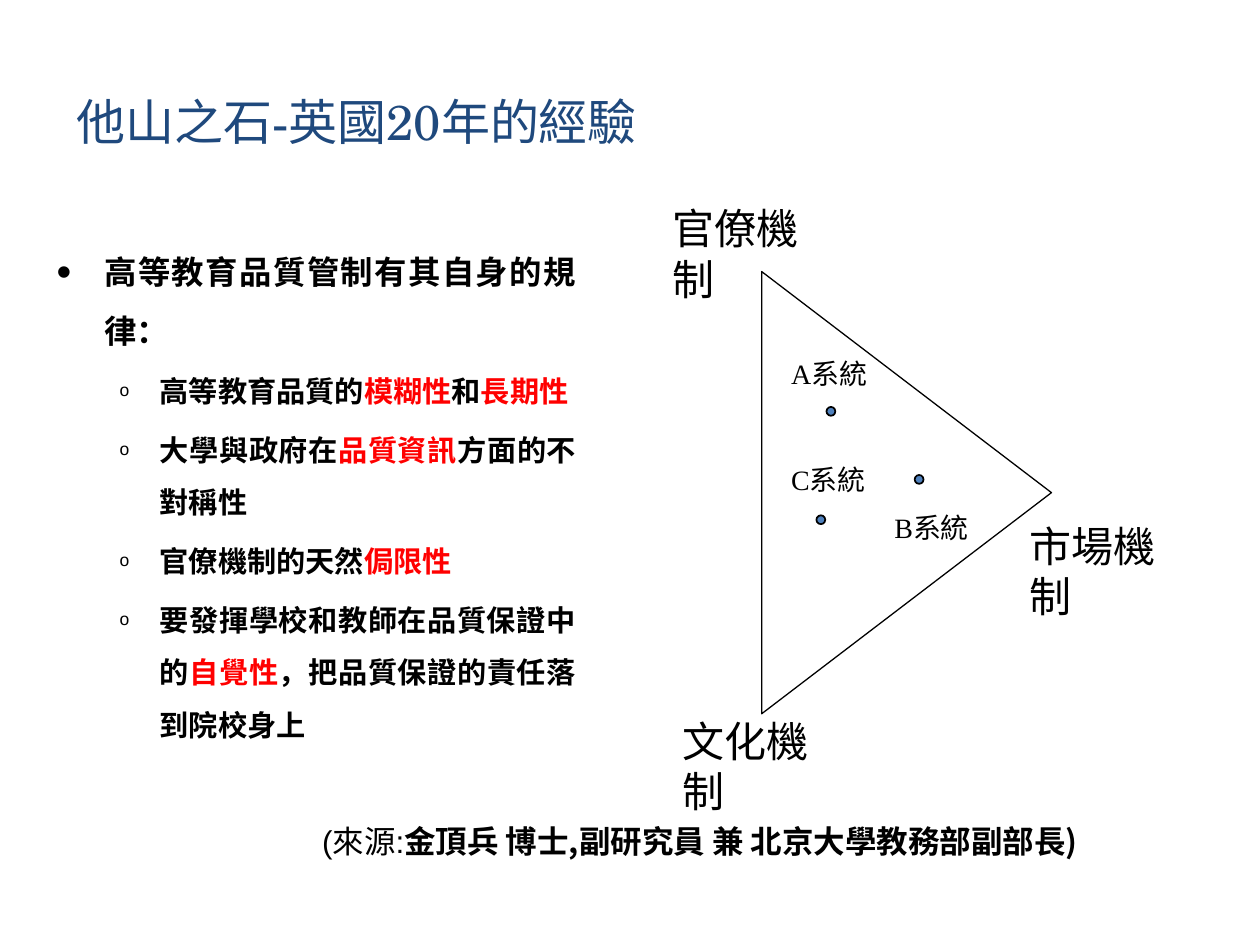
from dataclasses import dataclass
from typing import NamedTuple

from lxml.etree import SubElement
from pptx import Presentation
from pptx.dml.color import RGBColor
from pptx.enum.shapes import MSO_SHAPE as Shape
from pptx.enum.text import MSO_ANCHOR as Anchor, PP_ALIGN as Align
from pptx.oxml.ns import qn
from pptx.util import Emu, Pt

PX = 9144  # 100 px to the inch


@dataclass(frozen=True)
class Theme:
    ink: str = "000000"
    title: str = "1F497D"
    accent: str = "FF0000"
    dot: str = "4F81BD"
    paper: str = "FFFFFF"
    cjk: str = "Noto Sans CJK SC"
    sans: str = "Arial"
    serif: str = "Times New Roman"
    display: str = "TeX Gyre Schola"
    title_size: float = 28
    corner_size: float = 24
    system_size: float = 16
    source_size: float = 18
    rule_size: float = 18.5
    point_size: float = 16.7


THEME = Theme()


class Area(NamedTuple):
    left: int
    top: int
    width: int
    height: int


class Span(NamedTuple):
    text: str
    color: str = THEME.ink
    font: str = THEME.cjk
    bold: bool = True


class Bullet(NamedTuple):
    mark: str
    percent: int
    margin: int
    hang: int


class Label(NamedTuple):
    text: str
    area: Area
    size: float


RULE_BULLET = Bullet("•", 130, 38, 38)
POINT_BULLET = Bullet("o", 60, 82, 32)

TITLE = "他山之石-英國20年的經驗"
RULE = [Span("高等教育品質管制有其自身的規律：")]
POINTS = [
    [Span("高等教育品質的"), Span("模糊性", THEME.accent), Span("和"), Span("長期性", THEME.accent)],
    [Span("大學與政府在"), Span("品質資訊", THEME.accent), Span("方面的不對稱性")],
    [Span("官僚機制的天然"), Span("侷限性", THEME.accent)],
    [Span("要發揮學校和教師在品質保證中的"), Span("自覺性", THEME.accent),
     Span("，把品質保證的責任落到院校身上")],
]
SOURCE = [
    Span("(來源:", font=THEME.sans, bold=False),
    Span("金頂兵 博士,副研究員 兼 北京大學教務部副部長)"),
]
LABELS = [
    Label("官僚機制", Area(524, 156, 127, 43), THEME.corner_size),
    Label("市場機制", Area(807, 408, 127, 43), THEME.corner_size),
    Label("文化機制", Area(532, 563, 127, 43), THEME.corner_size),
    Label("A系統", Area(618, 278, 83, 32), THEME.system_size),
    Label("B系統", Area(700, 400, 83, 32), THEME.system_size),
    Label("C系統", Area(618, 362, 108, 37), THEME.system_size),
]
DOTS = [(656, 323), (648, 409), (726, 377)]
DOT_SIZE = 7


def emu(area: Area) -> list[Emu]:
    return [Emu(length * PX) for length in area]


def apply(target, values: dict) -> None:
    for name, value in values.items():
        setattr(target, name, value)


def add_spans(para, spans: list[Span], size: float) -> None:
    for span in spans:
        run = para.add_run()
        run.text = span.text
        apply(run.font, {"name": span.font, "size": Pt(size), "bold": span.bold})
        run.font.color.rgb = RGBColor.from_string(span.color)
        SubElement(run._r.get_or_add_rPr(), qn("a:ea"), typeface=THEME.cjk)


def add_bullet(para, bullet: Bullet) -> None:
    props = para._p.get_or_add_pPr()
    props.set("marL", str(bullet.margin * PX))
    props.set("indent", str(-bullet.hang * PX))
    SubElement(props, qn("a:buSzPct"), val=str(bullet.percent * 1000))
    SubElement(props, qn("a:buFont"), typeface=THEME.sans)
    SubElement(props, qn("a:buChar"), char=bullet.mark)


def add_frame(slide, area: Area):
    frame = slide.shapes.add_textbox(*emu(area)).text_frame
    frame.word_wrap = True
    return frame


def add_title(slide) -> None:
    box = slide.shapes.title
    apply(box, dict(zip(("left", "top", "width", "height"), emu(Area(51, 68, 900, 101)))))
    box.text_frame.vertical_anchor = Anchor.TOP
    para = box.text_frame.paragraphs[0]
    para.alignment = Align.LEFT
    add_spans(para, [Span(TITLE, THEME.title, THEME.display, False)], THEME.title_size)


def add_rules(slide) -> None:
    frame = add_frame(slide, Area(35, 180, 432, 433))
    rows = [(RULE, RULE_BULLET, THEME.rule_size)]
    rows += [(point, POINT_BULLET, THEME.point_size) for point in POINTS]
    for index, (spans, bullet, size) in enumerate(rows):
        para = frame.add_paragraph() if index else frame.paragraphs[0]
        apply(para, {"alignment": Align.JUSTIFY, "line_spacing": 1.5,
                     "space_before": Pt(3.5 if index else 0)})
        add_bullet(para, bullet)
        add_spans(para, spans, size)


def add_label(slide, label: Label) -> None:
    para = add_frame(slide, label.area).paragraphs[0]
    add_spans(para, [Span(label.text, font=THEME.serif, bold=False)], label.size)


def add_figure(slide, kind: Shape, area: Area, fill: str, line_width: float):
    figure = slide.shapes.add_shape(kind, *emu(area))
    figure.shadow.inherit = False
    figure.fill.solid()
    figure.fill.fore_color.rgb = RGBColor.from_string(fill)
    figure.line.color.rgb = RGBColor.from_string(THEME.ink)
    figure.line.width = Pt(line_width)
    return figure


def add_source(slide) -> None:
    para = add_frame(slide, Area(225, 651, 661, 68)).paragraphs[0]
    apply(para, {"alignment": Align.CENTER, "line_spacing": 0.9})
    add_spans(para, SOURCE, THEME.source_size)


def main() -> None:
    deck = Presentation()
    apply(deck, {"slide_width": Emu(1000 * PX), "slide_height": Emu(750 * PX)})
    slide = deck.slides.add_slide(deck.slide_layouts.get_by_name("Title Only"))
    add_title(slide)
    add_rules(slide)
    triangle = add_figure(slide, Shape.ISOSCELES_TRIANGLE, Area(544, 276, 351, 230),
                          THEME.paper, 0.75)
    triangle.rotation = 90
    for left, top in DOTS:
        add_figure(slide, Shape.OVAL, Area(left, top, DOT_SIZE, DOT_SIZE), THEME.dot, 1)
    for label in LABELS:
        add_label(slide, label)
    add_source(slide)
    deck.save("out.pptx")


if __name__ == "__main__":
    main()
